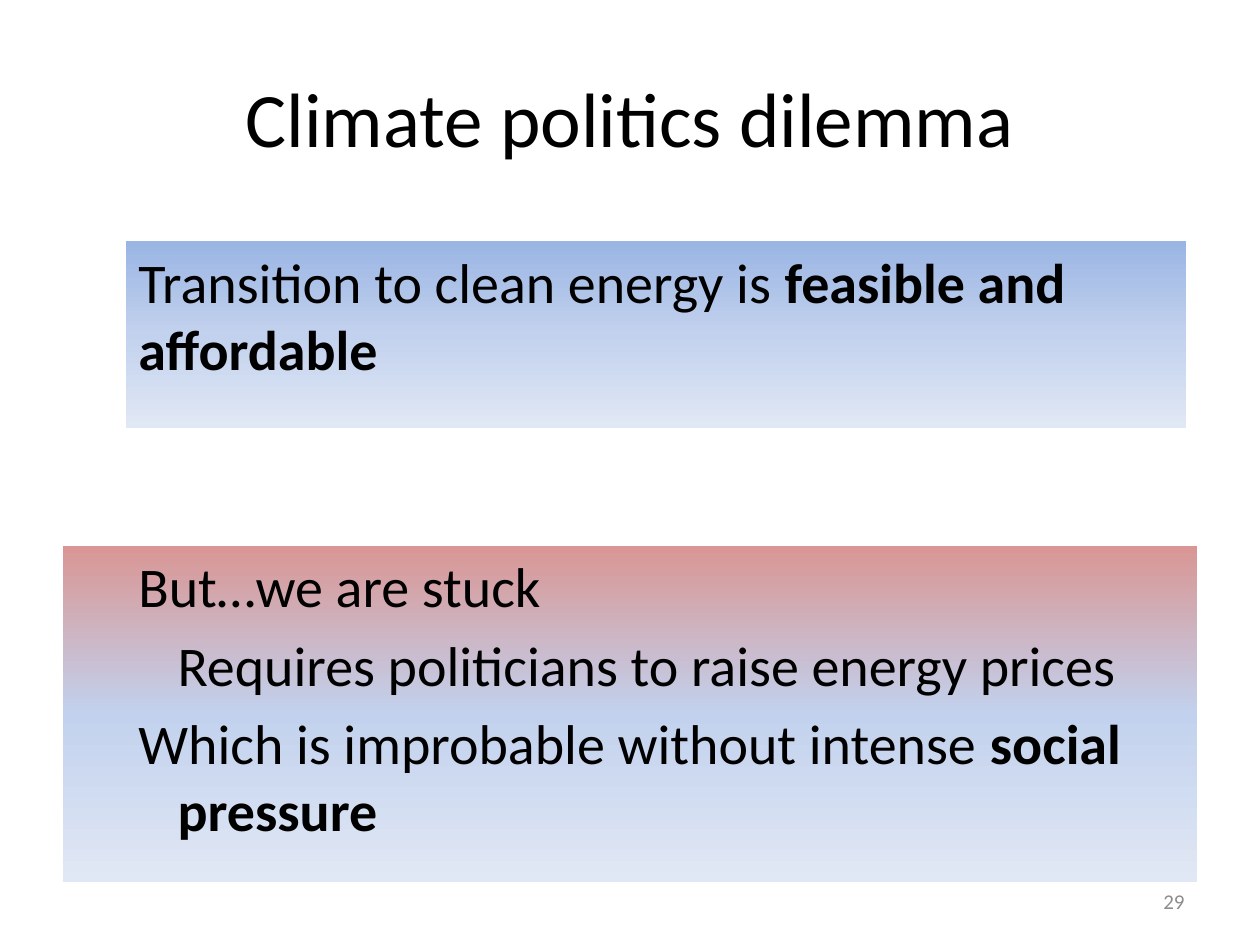
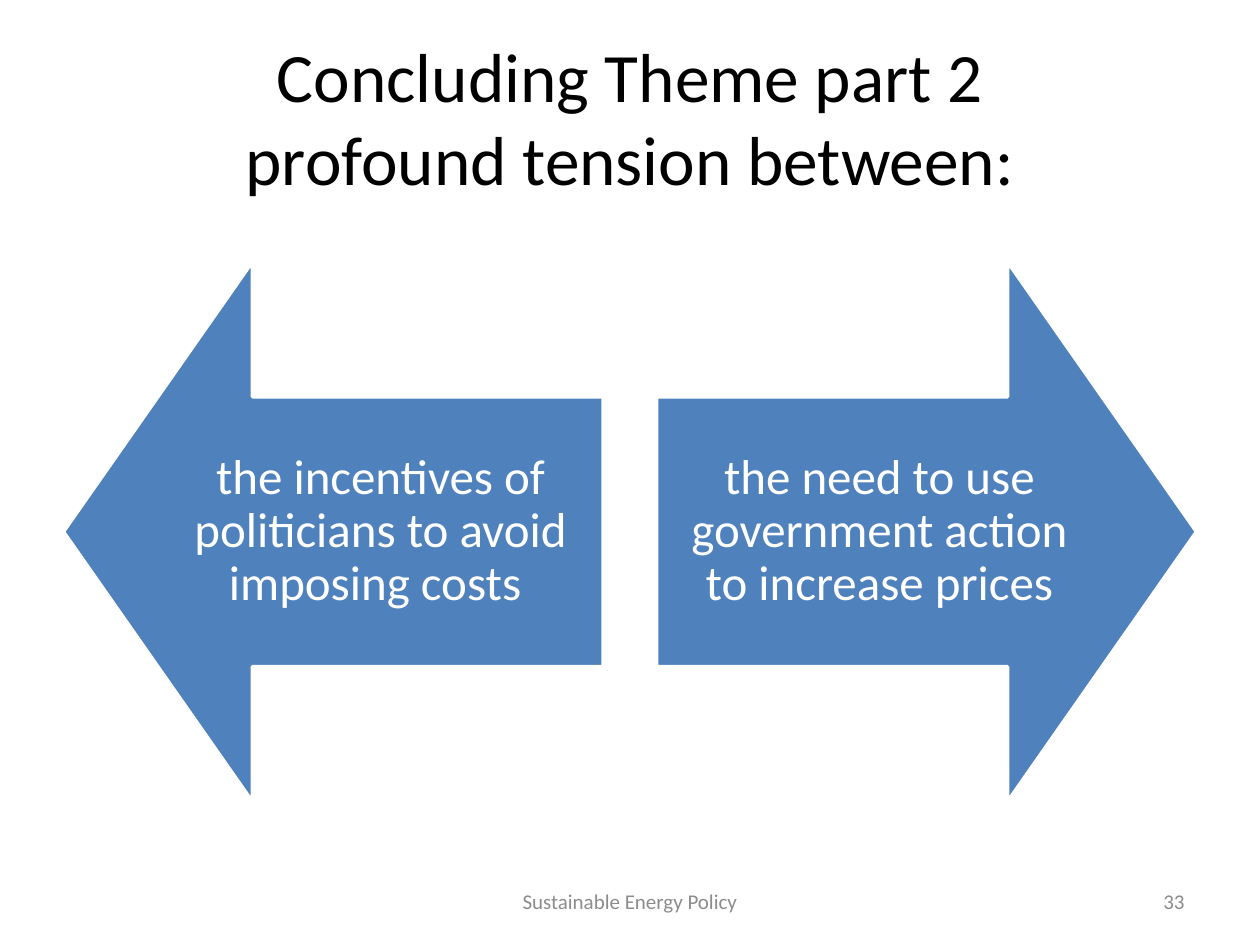
from copy import deepcopy

from pptx import Presentation
from pptx.dml.color import RGBColor
from pptx.enum.shapes import MSO_SHAPE as Shape
from pptx.enum.text import MSO_ANCHOR as Anchor, PP_ALIGN as Align
from pptx.util import Cm, Pt

BLACK = RGBColor(0x00, 0x00, 0x00)
WHITE = RGBColor(0xFF, 0xFF, 0xFF)
GREY = RGBColor(0x8C, 0x8C, 0x8C)
BLUE = RGBColor(0x4F, 0x81, 0xBD)
ROSE = RGBColor(0xD9, 0x96, 0x94)
SKY = RGBColor(0x9A, 0xB5, 0xE4)
PALE_BLUE = RGBColor(0xC2, 0xD1, 0xED)
PALEST_BLUE = RGBColor(0xE1, 0xE8, 0xF5)

FONT = "Calibri"
SLIDE_WIDTH, SLIDE_HEIGHT = Cm(25.4), Cm(19.05)
MARGIN = Cm(1.27)
CONTENT_WIDTH = SLIDE_WIDTH - 2 * MARGIN
FOOTER_TOP, FOOTER_HEIGHT = Cm(17.65), Cm(1.02)
ARROW_SIZE = Cm(10.88)


def set_all(target, values):
    for name, value in values.items():
        setattr(target, name, value)


def write_paragraph(paragraph, pieces, size, color, **layout):
    """Fill a paragraph from (text, bold) pieces; a newline is a line break."""
    set_all(paragraph, layout)
    for text, bold in pieces:
        for number, line in enumerate(text.split("\n")):
            if number:
                paragraph.add_line_break()
            run = paragraph.add_run()
            run.text = line
            set_all(run.font, {"name": FONT, "size": Pt(size), "bold": bold})
            run.font.color.rgb = color


def add_text(slide, text, box, size, color, align):
    frame = slide.shapes.add_textbox(*box).text_frame
    set_all(frame, {"word_wrap": True, "vertical_anchor": Anchor.MIDDLE})
    write_paragraph(frame.paragraphs[0], [(text, False)], size, color, alignment=align)


def add_title(slide, text, size):
    box = (MARGIN, Cm(0.76), CONTENT_WIDTH, Cm(3.18))
    add_text(slide, text, box, size, BLACK, Align.CENTER)


def add_slide_number(slide, number):
    width = Cm(5.93)
    box = (SLIDE_WIDTH - MARGIN - width, FOOTER_TOP, width, FOOTER_HEIGHT)
    add_text(slide, str(number), box, 12, GREY, Align.RIGHT)


def add_footer(slide, text):
    width = Cm(8.04)
    box = ((SLIDE_WIDTH - width) // 2, FOOTER_TOP, width, FOOTER_HEIGHT)
    add_text(slide, text, box, 12, GREY, Align.CENTER)


def fill_downwards(shape, colors):
    """Fill with an evenly spaced gradient from top to bottom."""
    fill = shape.fill
    fill.gradient()
    fill.gradient_angle = 270
    stop_list = shape._element.spPr.find(".//{*}gsLst")
    while len(stop_list) < len(colors):
        stop_list.append(deepcopy(stop_list[0]))
    for index, (stop, color) in enumerate(zip(fill.gradient_stops, colors)):
        stop.position = index / (len(colors) - 1)
        stop.color.rgb = color


def add_statement_panel(slide, box, top_color, paragraphs):
    """Add a gradient panel; each paragraph is (pieces, margin, first-line indent)."""
    panel = slide.shapes.add_shape(Shape.RECTANGLE, *box)
    panel.shadow.inherit = False
    panel.line.fill.background()
    fill_downwards(panel, [top_color, PALE_BLUE, PALEST_BLUE])
    frame = panel.text_frame
    set_all(frame, {"word_wrap": True, "vertical_anchor": Anchor.TOP})
    for index, (pieces, margin, indent) in enumerate(paragraphs):
        paragraph = frame.add_paragraph() if index else frame.paragraphs[0]
        write_paragraph(paragraph, pieces, 32, BLACK, alignment=Align.LEFT,
                        space_before=Pt(6.4 if index else 0))
        properties = paragraph._p.get_or_add_pPr()
        properties.set("marL", str(margin))
        properties.set("indent", str(indent))


def add_arrow(slide, kind, left, text):
    arrow = slide.shapes.add_shape(kind, left, Cm(5.28), ARROW_SIZE, ARROW_SIZE)
    arrow.shadow.inherit = False
    arrow.adjustments[0] = 0.5
    arrow.adjustments[1] = 0.35
    arrow.fill.solid()
    arrow.fill.fore_color.rgb = BLUE
    arrow.line.color.rgb = WHITE
    arrow.line.width = Pt(2)
    frame = arrow.text_frame
    sides = ("left", "top", "right", "bottom")
    set_all(frame, {f"margin_{side}": Cm(0.55) for side in sides})
    set_all(frame, {"word_wrap": True, "vertical_anchor": Anchor.MIDDLE})
    write_paragraph(frame.paragraphs[0], [(text, False)], 28, WHITE,
                    alignment=Align.CENTER, line_spacing=0.9)


def build_dilemma_slide(slide):
    add_title(slide, "Climate politics dilemma", 44)
    margin, hanging = Cm(2.06), Cm(-0.79)
    stuck_box = (MARGIN, Cm(11), CONTENT_WIDTH, Cm(6.78))
    add_statement_panel(slide, stuck_box, ROSE, [
        ([("But…we are stuck", False)], margin, hanging),
        ([("Requires politicians to raise energy prices", False)], margin, 0),
        ([("Which is improbable without intense ", False),
          ("social pressure", True)], margin, hanging),
    ])
    add_slide_number(slide, 29)
    feasible_box = (Cm(2.54), Cm(4.86), Cm(21.38), Cm(3.77))
    add_statement_panel(slide, feasible_box, SKY, [
        ([("Transition to clean energy is ", False),
          ("feasible and affordable", True)], 0, 0),
    ])


def build_tension_slide(slide):
    add_title(slide, "Concluding Theme part 2\nprofound tension between:", 39.6)
    add_arrow(slide, Shape.LEFT_ARROW, Cm(1.28),
              "the incentives of politicians to avoid imposing costs ")
    add_arrow(slide, Shape.RIGHT_ARROW, SLIDE_WIDTH - Cm(1.28) - ARROW_SIZE,
              "the need to use government action to increase prices")
    add_footer(slide, "Sustainable Energy Policy")
    add_slide_number(slide, 33)


def main():
    presentation = Presentation()
    set_all(presentation, {"slide_width": SLIDE_WIDTH, "slide_height": SLIDE_HEIGHT})
    blank_layout = presentation.slide_layouts[6]
    for build in (build_dilemma_slide, build_tension_slide):
        build(presentation.slides.add_slide(blank_layout))
    presentation.save("out.pptx")


if __name__ == "__main__":
    main()
